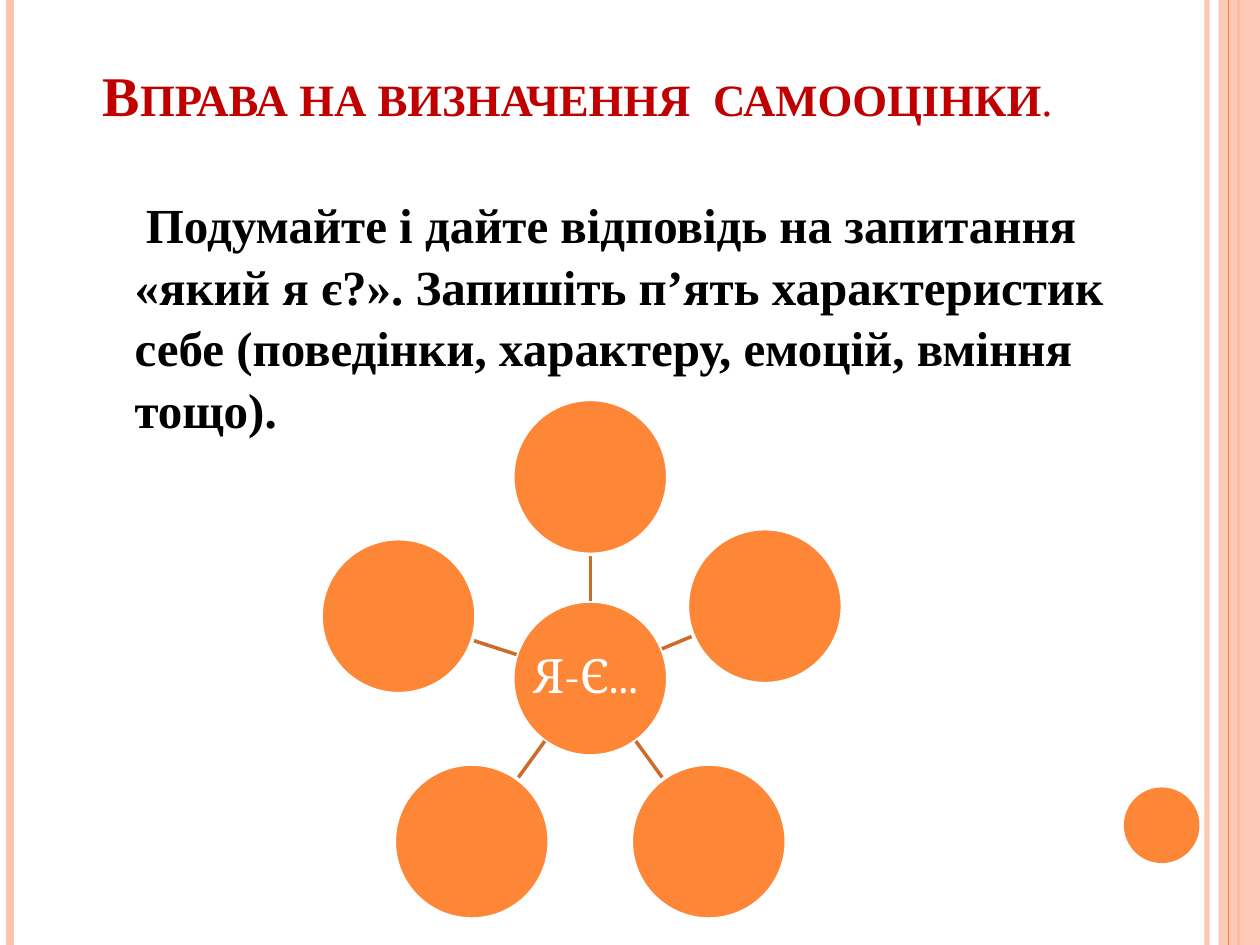
from math import cos, radians, sin

from lxml import etree
from pptx import Presentation
from pptx.dml.color import RGBColor
from pptx.enum.shapes import MSO_CONNECTOR, MSO_SHAPE
from pptx.enum.text import MSO_ANCHOR, PP_ALIGN
from pptx.oxml.ns import qn
from pptx.util import Inches, Pt

STRAIGHT = MSO_CONNECTOR.STRAIGHT
OVAL = MSO_SHAPE.OVAL
RECTANGLE = MSO_SHAPE.RECTANGLE
CENTER = PP_ALIGN.CENTER
BOTTOM = MSO_ANCHOR.BOTTOM
MIDDLE = MSO_ANCHOR.MIDDLE

COLORS = {
    "orange": "FE8637",
    "peach": "FEC3AE",
    "spoke": "CB6B2C",
    "title": "C00000",
    "black": "000000",
    "white": "FFFFFF",
}
SERIF = "Times New Roman"
PAGE_HEIGHT = 7.5
HUB_X, HUB_Y = 4.685, 5.385
CIRCLE = 1.23
# Angle in degrees (clockwise from the right) and distance from the hub
SATELLITES = [(-90, 1.6), (-22.5, 1.5), (54, 1.6), (126, 1.6), (198, 1.6)]


def rgb(name):
    return RGBColor.from_string(COLORS[name])


def set_opacity(shape, percent):
    """Make the first colour of the shape, fill or line, partly transparent."""
    color = shape._element.spPr.find(".//" + qn("a:srgbClr"))
    etree.SubElement(color, qn("a:alpha")).set("val", str(percent * 1000))


def add_line(slide, start, end, color, width):
    points = [Inches(value) for value in (*start, *end)]
    line = slide.shapes.add_connector(STRAIGHT, *points)
    line.line.color.rgb = rgb(color)
    line.line.width = Pt(width)
    etree.SubElement(line._element.spPr, qn("a:effectLst"))
    return line


def add_filled(slide, kind, left, top, width, height, color, outline=None):
    shape = slide.shapes.add_shape(
        kind, Inches(left), Inches(top), Inches(width), Inches(height))
    shape.shadow.inherit = False
    shape.fill.solid()
    shape.fill.fore_color.rgb = rgb(color)
    if outline:
        shape.line.color.rgb = rgb(outline)
        shape.line.width = Pt(2)
    else:
        shape.line.fill.background()
    return shape


def add_circle(slide, x, y):
    """Add a diagram circle centred on x, y."""
    return add_filled(slide, OVAL, x - CIRCLE / 2, y - CIRCLE / 2,
                      CIRCLE, CIRCLE, "orange", "white")


def add_text_box(slide, left, top, width, height):
    box = slide.shapes.add_textbox(
        Inches(left), Inches(top), Inches(width), Inches(height))
    box.text_frame.word_wrap = True
    return box.text_frame


def style(paragraph, font, size, color, bold=None):
    paragraph.font.name = font
    paragraph.font.size = Pt(size)
    paragraph.font.color.rgb = rgb(color)
    paragraph.font.bold = bold


def add_frame(slide):
    """Add the vertical stripes and the dot at the edges of the slide."""
    def stripe(x, color, width):
        return add_line(slide, (x, 0), (x, PAGE_HEIGHT), color, width)

    set_opacity(stripe(9.58, "peach", 3), 93)
    stripe(0.08, "peach", 4.5)
    stripe(9.83, "orange", 1.5)
    band = add_filled(slide, RECTANGLE, 9.67, 0, 0.33, PAGE_HEIGHT, "peach")
    set_opacity(band, 87)
    stripe(9.75, "orange", 0.75)
    add_filled(slide, OVAL, 8.92, 6.25, 0.6, 0.6, "orange")


def add_title(slide):
    frame = add_text_box(slide, 0.5, 0.3, 8.17, 1.25)
    frame.vertical_anchor = BOTTOM
    frame.margin_bottom = Inches(0.54)
    title = frame.paragraphs[0]
    title.alignment = CENTER
    style(title, SERIF, 32, "title")
    for text, bold in [("Вправа на визначення  самооцінки", True), (".", False)]:
        run = title.add_run()
        run.text = text
        run.font.bold = bold
        run._r.get_or_add_rPr().set("cap", "small")


def add_task(slide):
    task = add_text_box(slide, 0.67, 1.47, 8.5, 3.69).paragraphs[0]
    task.text = ("Подумайте і дайте відповідь на запитання «який я є?». "
                 "Запишіть п’ять характеристик себе (поведінки, характеру, "
                 "емоцій, вміння тощо).")
    task.line_spacing = 1.05
    properties = task._p.get_or_add_pPr()
    properties.set("marL", str(Inches(0.3)))
    properties.set("indent", str(Inches(0.09)))
    style(task, SERIF, 28, "black", True)


def add_diagram(slide):
    hub = add_circle(slide, HUB_X, HUB_Y).text_frame
    hub.margin_left = hub.margin_right = Inches(0.02)
    hub.margin_top = hub.margin_bottom = Inches(0.02)
    hub.vertical_anchor = MIDDLE
    hub.word_wrap = False
    label = hub.paragraphs[0]
    label.text = "Я-Є... "
    label.alignment = CENTER
    label.line_spacing = 0.9
    style(label, "Cambria", 27, "white")

    for angle, distance in SATELLITES:
        def along(length):
            return (HUB_X + length * cos(radians(angle)),
                    HUB_Y + length * sin(radians(angle)))

        add_line(slide, along(CIRCLE / 2), along(distance - CIRCLE / 2),
                 "spoke", 2)
        add_circle(slide, *along(distance))


def main():
    presentation = Presentation()
    presentation.slide_width = Inches(10)
    presentation.slide_height = Inches(PAGE_HEIGHT)
    slide = presentation.slides.add_slide(presentation.slide_layouts[6])
    add_frame(slide)
    add_title(slide)
    add_task(slide)
    add_diagram(slide)
    presentation.save("out.pptx")


if __name__ == "__main__":
    main()
